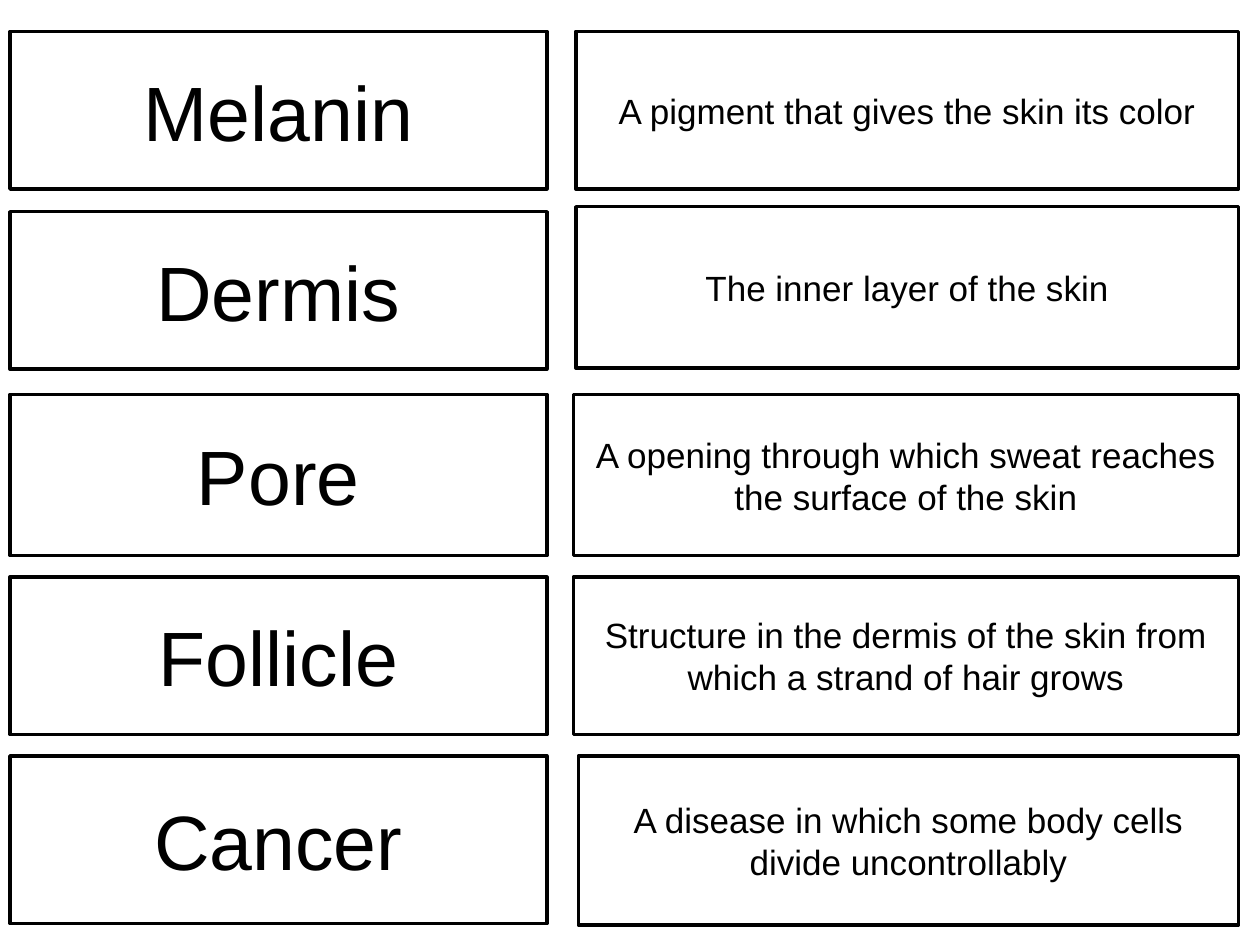
from dataclasses import dataclass

from pptx import Presentation
from pptx.dml.color import RGBColor
from pptx.enum.shapes import MSO_SHAPE
from pptx.enum.text import MSO_ANCHOR, PP_ALIGN
from pptx.util import Inches, Pt

PROCESS = MSO_SHAPE.FLOWCHART_PROCESS
MIDDLE = MSO_ANCHOR.MIDDLE
CENTER = PP_ALIGN.CENTER
BLANK_LAYOUT = 6


@dataclass(frozen=True)
class Theme:
    font: str = "Arial"
    ink: RGBColor = RGBColor(0, 0, 0)
    paper: RGBColor = RGBColor(255, 255, 255)
    term_size: int = 44
    definition_size: int = 20
    border: int = 2


TERM_LEFT, TERM_WIDTH = 0.08, 4.26
DEFINITION_RIGHT = 9.83

# term, top, height, definition, definition left, top, height
CARDS = [
    ("Melanin", 0.25, 1.25,
     "A pigment that gives the skin its color", 4.57, 0.25, 1.25),
    ("Dermis", 1.68, 1.25,
     "The inner layer of the skin", 4.57, 1.64, 1.28),
    ("Pore", 3.13, 1.28,
     "A opening through which sweat reaches the surface of the skin",
     4.55, 3.13, 1.28),
    ("Follicle", 4.58, 1.25,
     "Structure in the dermis of the skin from which a strand of hair grows",
     4.55, 4.58, 1.25),
    ("Cancer", 6, 1.33,
     "A disease in which some body cells divide uncontrollably",
     4.59, 6, 1.34),
]


class CardSlide:
    def __init__(self, slide, theme):
        self.slide = slide
        self.theme = theme

    def card(self, text, size, left, top, width, height):
        theme = self.theme
        shape = self.slide.shapes.add_shape(
            PROCESS, Inches(left), Inches(top), Inches(width), Inches(height))
        shape.shadow.inherit = False
        shape.fill.solid()
        shape.fill.fore_color.rgb = theme.paper
        shape.line.color.rgb = theme.ink
        shape.line.width = Pt(theme.border)

        frame = shape.text_frame
        frame.word_wrap = True
        frame.vertical_anchor = MIDDLE
        paragraph = frame.paragraphs[0]
        paragraph.alignment = CENTER
        run = paragraph.add_run()
        run.text = text
        run.font.name = theme.font
        run.font.size = Pt(size)
        run.font.color.rgb = theme.ink


def main():
    presentation = Presentation()
    presentation.slide_width = Inches(10)
    presentation.slide_height = Inches(7.5)
    slide = presentation.slides.add_slide(
        presentation.slide_layouts[BLANK_LAYOUT])
    theme = Theme()
    cards = CardSlide(slide, theme)

    for term, term_top, term_height, definition, left, top, height in CARDS:
        cards.card(term, theme.term_size,
                   TERM_LEFT, term_top, TERM_WIDTH, term_height)
        cards.card(definition, theme.definition_size,
                   left, top, DEFINITION_RIGHT - left, height)

    presentation.save("out.pptx")


if __name__ == "__main__":
    main()
